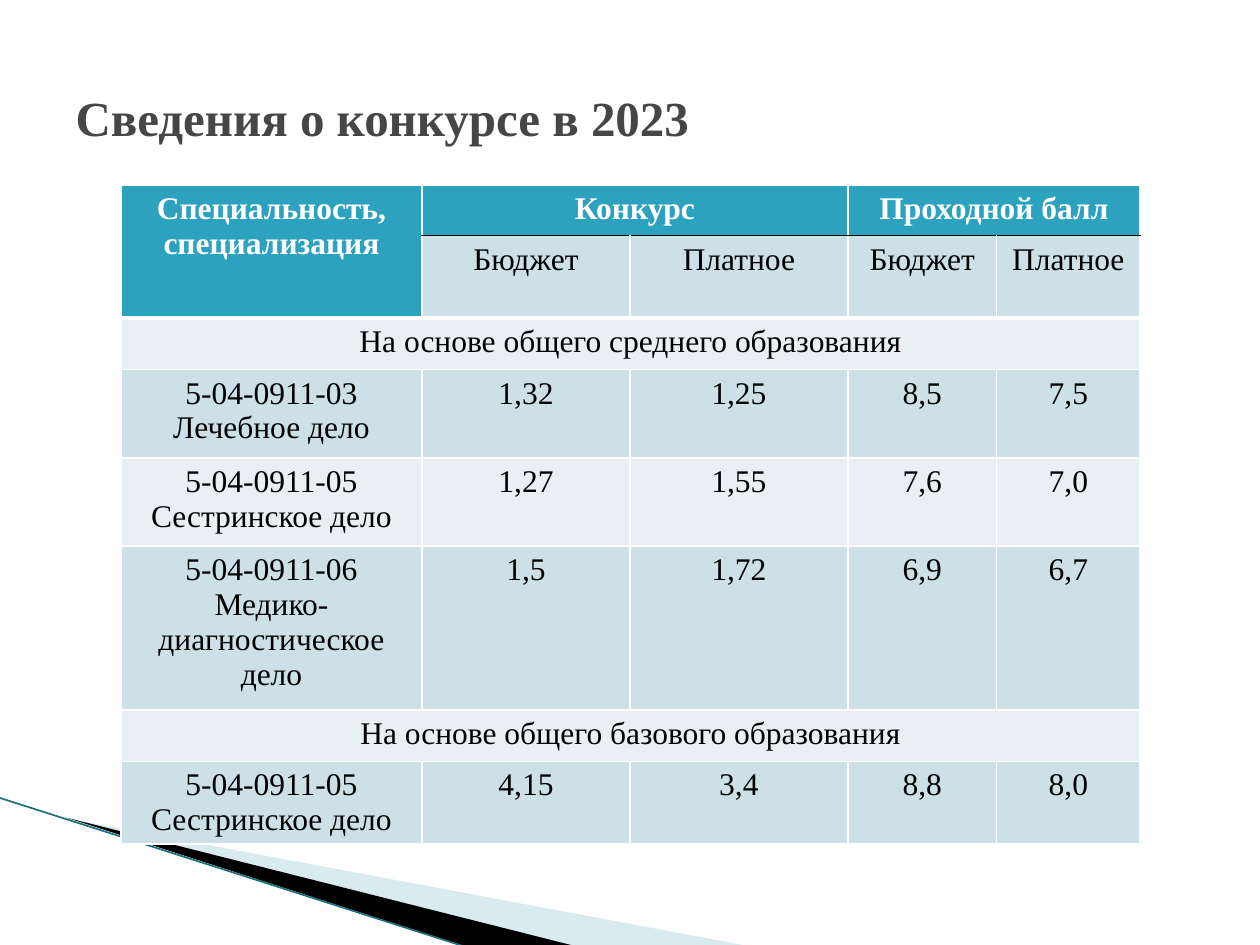
from dataclasses import dataclass

from lxml.etree import SubElement
from pptx import Presentation
from pptx.dml.color import RGBColor
from pptx.enum.shapes import MSO_CONNECTOR as CONNECTOR
from pptx.enum.text import MSO_ANCHOR as ANCHOR, PP_ALIGN as ALIGN
from pptx.oxml.ns import qn
from pptx.util import Inches, Pt


@dataclass(frozen=True)
class Theme:
    font: str = "Times New Roman"
    title_size: int = 28
    table_size: int = 18
    title: str = "464646"
    header: str = "2DA2BF"
    dark_band: str = "CDE0E8"
    light_band: str = "E8F0F4"
    wedge: str = "A0CBDC"
    edge: str = "1B7083"
    black: str = "000000"
    white: str = "FFFFFF"


THEME = Theme()
COLS = [2.39, 1.65, 1.73, 1.18, 1.14]
ROWS = [0.4, 0.65, 0.41, 0.7, 0.7, 1.3, 0.41, 0.65]
CONTENT = [
    ["Специальность, специализация", "Конкурс", "", "Проходной балл", ""],
    ["", "Бюджет", "Платное", "Бюджет", "Платное"],
    ["На основе общего среднего образования", "", "", "", ""],
    ["5-04-0911-03 Лечебное дело", "1,32", "1,25", "8,5", "7,5"],
    ["5-04-0911-05 Сестринское дело", "1,27", "1,55", "7,6", "7,0"],
    ["5-04-0911-06 Медико-диагностическое дело", "1,5", "1,72", "6,9", "6,7"],
    ["На основе общего базового образования", "", "", "", ""],
    ["5-04-0911-05 Сестринское дело", "4,15", "3,4", "8,8", "8,0"],
]
MERGES = [
    ((0, 0), (1, 0)),
    ((0, 1), (0, 2)),
    ((0, 3), (0, 4)),
    ((2, 0), (2, 4)),
    ((6, 0), (6, 4)),
]


def rgb(color):
    return RGBColor.from_string(color)


def style_font(font, size, color, bold):
    font.name, font.size, font.bold = THEME.font, Pt(size), bold
    font.color.rgb = rgb(color)


def add_wedge(slide, corners, color, alpha=None):
    points = [(Inches(x), Inches(y)) for x, y in corners]
    builder = slide.shapes.build_freeform(*points[0])
    builder.add_line_segments(points[1:], close=True)
    sp = builder.convert_to_shape()
    sp.shadow.inherit = False
    sp.line.fill.background()
    sp.fill.solid()
    sp.fill.fore_color.rgb = rgb(color)
    if alpha is not None:
        clr = sp._element.spPr.find(".//" + qn("a:srgbClr"))
        SubElement(clr, qn("a:alpha"), val=str(alpha * 1000))


def add_edge(slide, start, end):
    ends = [Inches(v) for v in (*start, *end)]
    line = slide.shapes.add_connector(CONNECTOR.STRAIGHT, *ends)
    line.line.color.rgb = rgb(THEME.edge)
    line.line.width = Pt(0.95)
    SubElement(line._element.spPr, qn("a:effectLst"))


def add_border(cell, side, color, width):
    tc_pr = cell._tc.get_or_add_tcPr()
    ln = SubElement(tc_pr, qn("a:ln" + side), w=str(Pt(width)))
    fill = SubElement(ln, qn("a:solidFill"))
    SubElement(fill, qn("a:srgbClr"), val=color)


def style_cell(cell, row, col):
    header = row == 0 or (row == 1 and col == 0)
    borders = {side: (THEME.white, 1) for side in "LRTB"}
    if col > 0 and row < 2:
        borders["B" if row == 0 else "T"] = (THEME.black, 1)
    if row in (1, 2):
        borders["B" if row == 1 else "T"] = (THEME.white, 3)
    for side, (color, width) in borders.items():
        add_border(cell, side, color, width)
    band = THEME.dark_band if row % 2 else THEME.light_band
    cell.fill.solid()
    cell.fill.fore_color.rgb = rgb(THEME.header if header else band)
    p = cell.text_frame.paragraphs[0]
    p.alignment = ALIGN.CENTER
    style_font(p.font, THEME.table_size,
               THEME.white if header else THEME.black, header)


def add_results_table(slide):
    frame = slide.shapes.add_table(
        len(ROWS), len(COLS), Inches(0.96), Inches(1.47),
        Inches(sum(COLS)), Inches(sum(ROWS)))
    table = frame.table
    for column, width in zip(table.columns, COLS):
        column.width = Inches(width)
    for row, height in zip(table.rows, ROWS):
        row.height = Inches(height)
    for r, texts in enumerate(CONTENT):
        for c, text in enumerate(texts):
            cell = table.cell(r, c)
            cell.text = text
            style_cell(cell, r, c)
    for first, last in MERGES:
        table.cell(*first).merge(table.cell(*last))


def set_title(slide, text):
    title = slide.shapes.title
    title.left, title.top = Inches(0.5), Inches(0.3)
    title.width, title.height = Inches(9), Inches(1.25)
    tf = title.text_frame
    tf.text = text
    tf.vertical_anchor = ANCHOR.MIDDLE
    p = tf.paragraphs[0]
    p.alignment = ALIGN.LEFT
    style_font(p.font, THEME.title_size, THEME.title, True)


def main():
    prs = Presentation()
    prs.slide_width, prs.slide_height = Inches(10), Inches(7.5)
    slide = prs.slides.add_slide(prs.slide_layouts[5])
    set_title(slide, "Сведения о конкурсе в 2023")
    add_wedge(slide, [(0.55, 6.5), (5.95, 7.51), (4.56, 7.51)],
              THEME.wedge, alpha=40)
    add_wedge(slide, [(0.53, 6.49), (4.57, 7.51), (3.72, 7.52)], THEME.black)
    add_edge(slide, (-0.01, 6.33), (3.71, 7.52))
    add_results_table(slide)
    prs.save("out.pptx")


if __name__ == "__main__":
    main()
